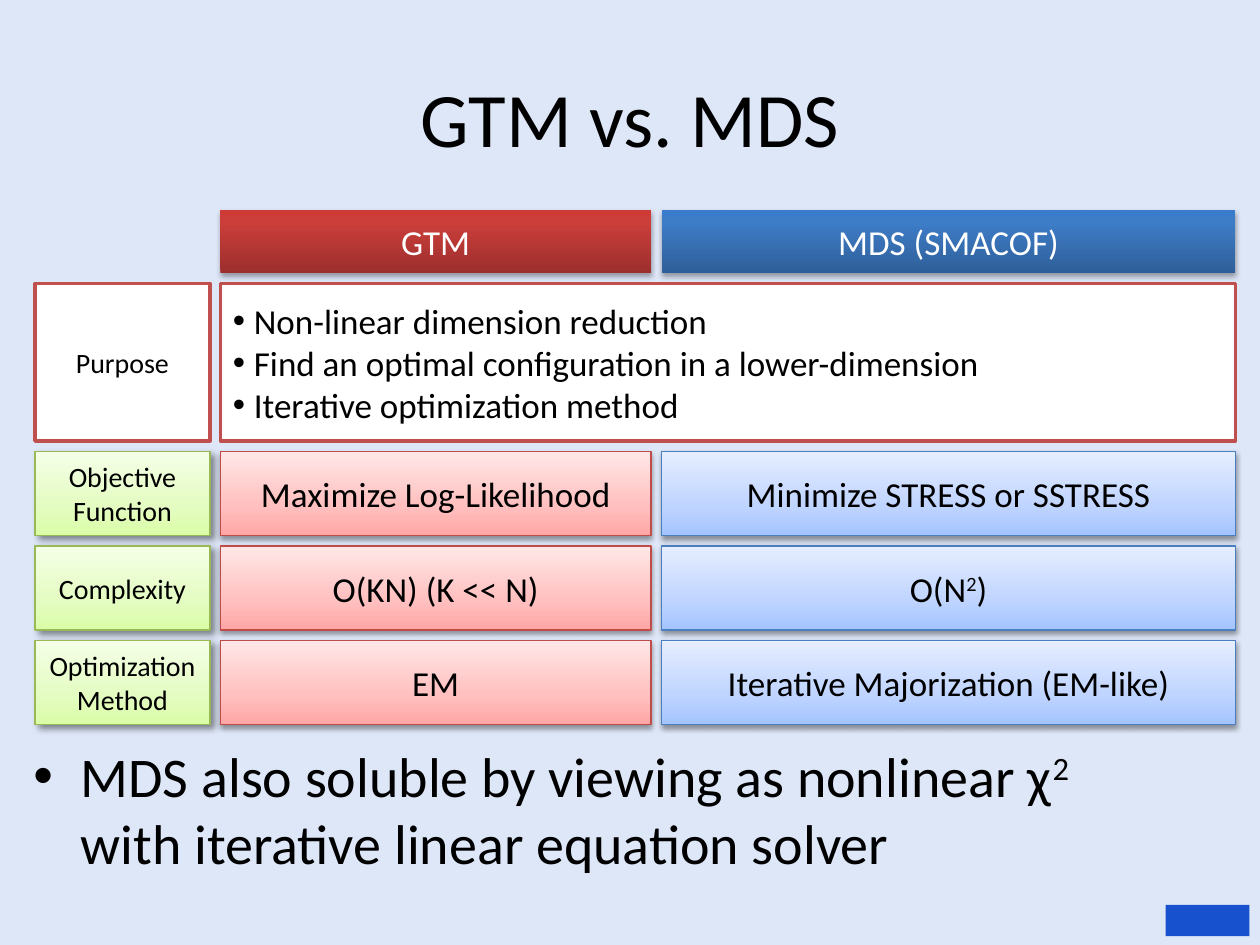
import copy

import pptx
import pptx.dml.color
import pptx.enum.shapes
import pptx.enum.text
import pptx.oxml
import pptx.oxml.ns
import pptx.util

Pt = pptx.util.Pt
RGB = pptx.dml.color.RGBColor
qn = pptx.oxml.ns.qn
ALIGN = pptx.enum.text.PP_ALIGN
ANCHOR = pptx.enum.text.MSO_ANCHOR
RECTANGLE = pptx.enum.shapes.MSO_SHAPE.RECTANGLE

BACKGROUND = RGB(0xDE, 0xE7, 0xF8)
BLACK = RGB(0x00, 0x00, 0x00)
WHITE = RGB(0xFF, 0xFF, 0xFF)
OUTLINE = RGB(0xC0, 0x50, 0x4D)
RED_LINE = RGB(0xBF, 0x4C, 0x48)
BLUE_LINE = RGB(0x4B, 0x7E, 0xBC)
GREEN_LINE = RGB(0x98, 0xB9, 0x55)
MARK = RGB(0x18, 0x51, 0xCE)
DARK_RED = (RGB(0x9C, 0x2F, 0x2D), RGB(0xCB, 0x3E, 0x3A), RGB(0xCE, 0x3B, 0x37))
DARK_BLUE = (RGB(0x2F, 0x5F, 0x99), RGB(0x3D, 0x7C, 0xC7), RGB(0x3A, 0x7C, 0xCB))
PALE_RED = (RGB(0xFF, 0xA6, 0xA5), RGB(0xFF, 0xC0, 0xBF), RGB(0xFF, 0xE7, 0xE7))
PALE_BLUE = (RGB(0xA4, 0xC4, 0xFF), RGB(0xBF, 0xD4, 0xFF), RGB(0xE6, 0xEE, 0xFF))
PALE_GREEN = (RGB(0xDA, 0xFD, 0xA7), RGB(0xE4, 0xFC, 0xC2), RGB(0xF5, 0xFF, 0xE7))

# Shadows: opacity in percent, blur and distance in points, angle in degrees
HEADER_SHADOW = (35, 3.1, 1.8, 90)
CELL_SHADOW = (38, 3.1, 1.6, 90)
LABEL_SHADOW = (43, 4, 3, 45)

HEADER = dict(middle=0.8, shadow=HEADER_SHADOW, color=WHITE)
LABEL = dict(colors=PALE_GREEN, line=GREEN_LINE, shadow=LABEL_SHADOW, size=16)
GTM = dict(colors=PALE_RED, line=RED_LINE, shadow=CELL_SHADOW)
MDS = dict(colors=PALE_BLUE, line=BLUE_LINE, shadow=CELL_SHADOW)
PLAIN = dict(colors=(WHITE,), line=OUTLINE, line_width=2)


class Deck:
    def __init__(self, font="Calibri"):
        self.font = font
        self.prs = pptx.Presentation()
        self.prs.slide_width, self.prs.slide_height = Pt(720), Pt(540)
        self.s = self.prs.slides.add_slide(self.prs.slide_layouts[5])
        self.s.background.fill.solid()
        self.s.background.fill.fore_color.rgb = BACKGROUND

    def set_text(self, tf, paragraphs, size, color=BLACK, align=ALIGN.CENTER,
                 anchor=ANCHOR.MIDDLE, bullet_indent=0):
        """Fill a frame; ^ encloses superscripts and a newline breaks the line."""
        for name, value in dict(word_wrap=True, vertical_anchor=anchor).items():
            setattr(tf, name, value)
        for i, text in enumerate(paragraphs):
            p = tf.add_paragraph() if i else tf.paragraphs[0]
            p.alignment = align
            if bullet_indent:
                self.bullet(p, bullet_indent)
            for j, line in enumerate(text.split("\n")):
                if j:
                    p.add_line_break()
                for k, piece in enumerate(line.split("^")):
                    r = p.add_run()
                    r.text = piece
                    for name, value in dict(name=self.font, size=Pt(size)).items():
                        setattr(r.font, name, value)
                    r.font.color.rgb = color
                    if k % 2:
                        r.font._element.set("baseline", "30000")

    def bullet(self, p, indent):
        pPr = p._p.get_or_add_pPr()
        pPr.set("marL", str(Pt(indent)))
        pPr.set("indent", str(-Pt(indent)))
        font = pPr.makeelement(qn("a:buFont"), {"typeface": "Arial"})
        char = pPr.makeelement(qn("a:buChar"), {"char": "•"})
        pPr.extend((font, char))

    def title(self, text, x, y, w, h):
        sp = self.s.shapes.title
        for name, value in dict(left=x, top=y, width=w, height=h).items():
            setattr(sp, name, Pt(value))
        self.set_text(sp.text_frame, [text], 44)

    def text(self, paragraphs, x, y, w, h, **style):
        sp = self.s.shapes.add_textbox(Pt(x), Pt(y), Pt(w), Pt(h))
        self.set_text(sp.text_frame, paragraphs, **style)

    def box(self, paragraphs, x, y, w, h, colors, line=None, line_width=0.75,
            middle=0.35, shadow=None, size=20, **style):
        sp = self.s.shapes.add_shape(RECTANGLE, Pt(x), Pt(y), Pt(w), Pt(h))
        if len(colors) > 1:
            self.gradient(sp, colors, middle)
        else:
            sp.fill.solid()
            sp.fill.fore_color.rgb = colors[0]
        if line is None:
            sp.line.fill.background()
        else:
            sp.line.color.rgb = line
            sp.line.width = Pt(line_width)
        sp.shadow.inherit = False
        if shadow:
            self.shadow(sp, *shadow)
        self.set_text(sp.text_frame, paragraphs, size, **style)

    def gradient(self, sp, colors, middle):
        """Three colours running from the bottom to the top."""
        sp.fill.gradient()
        sp.fill.gradient_angle = 90
        stops = sp._element.spPr.find(".//" + qn("a:gsLst"))
        stops.append(copy.deepcopy(stops[-1]))
        for stop, color, position in zip(sp.fill.gradient_stops, colors, (0, middle, 1)):
            stop.color.rgb = color
            stop.position = position

    def shadow(self, sp, opacity, blur, distance, angle):
        effects = sp._element.spPr.find(qn("a:effectLst"))
        effects.append(pptx.oxml.parse_xml(
            f'<a:outerShdw {pptx.oxml.ns.nsdecls("a")} blurRad="{Pt(blur)}" '
            f'dist="{Pt(distance)}" dir="{angle * 60000}" rotWithShape="0">'
            f'<a:srgbClr val="{BLACK}"><a:alpha val="{opacity * 1000}"/></a:srgbClr>'
            '</a:outerShdw>'))


def main():
    deck = Deck()
    deck.box([], 666, 517, 48, 18, colors=(MARK,))
    deck.title("GTM vs. MDS", 36, 21.6, 648, 90)
    deck.text(["MDS also soluble by viewing as nonlinear χ^2^ with iterative linear "
               "equation solver"], 12, 420, 648, 104, size=32, align=ALIGN.LEFT,
              anchor=ANCHOR.TOP, bullet_indent=27)

    gap = 6
    widths = (100, 246, 328)
    lefts = [20 + sum(widths[:i]) + gap * i for i in range(len(widths))]
    label, gtm, mds = zip(lefts, widths)

    top, height = 120, 36
    for text, (x, w), colors in (("GTM", gtm, DARK_RED), ("MDS (SMACOF)", mds, DARK_BLUE)):
        deck.box([text], x, top, w, height, colors=colors, **HEADER)

    top, height = top + height + gap, 90
    deck.box(["Purpose"], label[0], top, label[1], height, size=16, **PLAIN)
    deck.box(["Non-linear dimension reduction",
              "Find an optimal configuration in a lower-dimension",
              "Iterative optimization method"],
             gtm[0], top, gtm[1] + gap + mds[1], height,
             align=ALIGN.LEFT, bullet_indent=12, **PLAIN)

    rows = (
        ("Objective\nFunction", "Maximize Log-Likelihood", "Minimize STRESS or SSTRESS"),
        ("Complexity", "O(KN) (K << N)", "O(N^2^)"),
        ("Optimization\nMethod", "EM", "Iterative Majorization (EM-like)"),
    )
    top, height = top + height + gap, 48
    for i, row in enumerate(rows):
        for text, (x, w), style in zip(row, (label, gtm, mds), (LABEL, GTM, MDS)):
            deck.box([text], x, top + i * (height + gap), w, height, **style)

    deck.prs.save("out.pptx")


if __name__ == "__main__":
    main()
